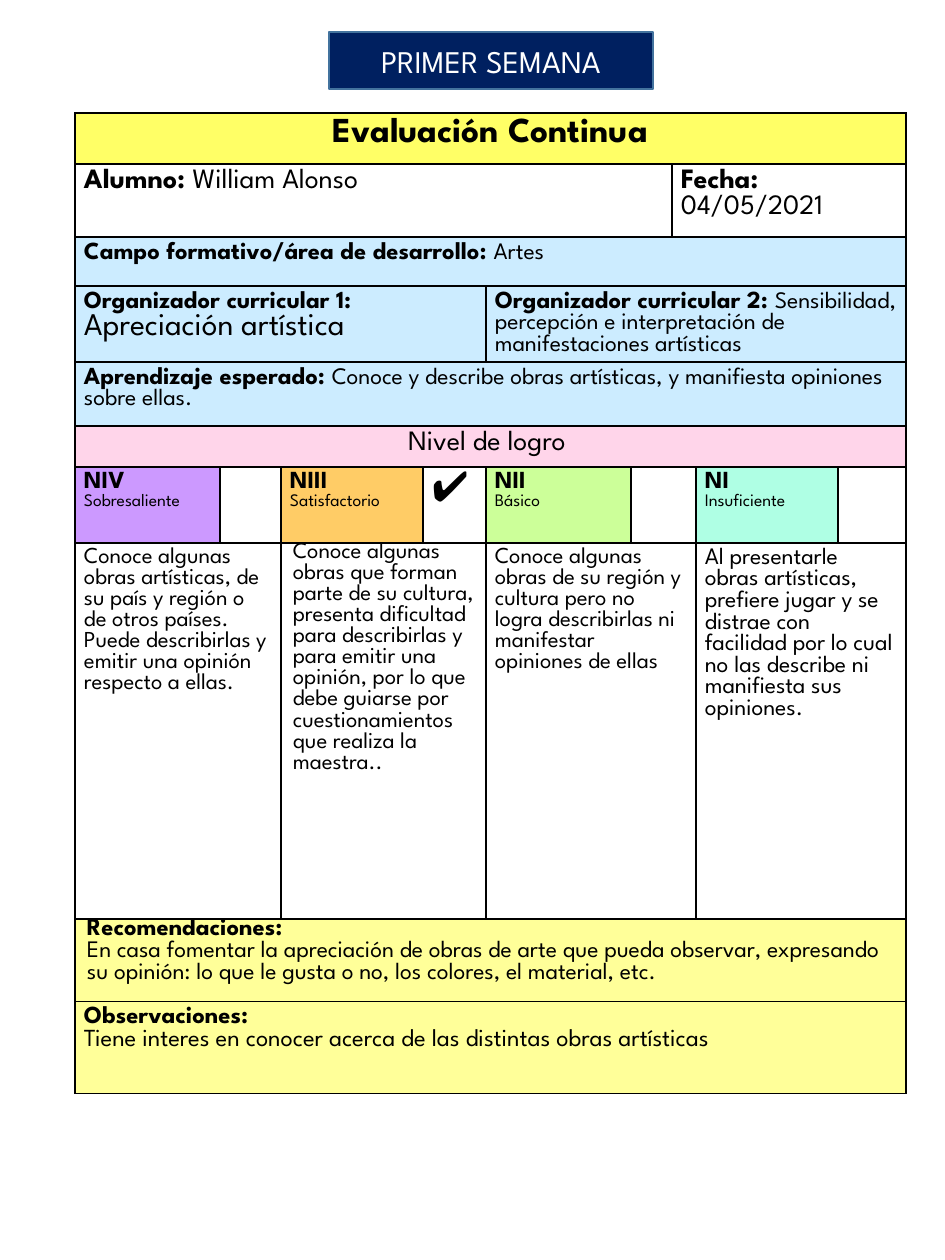
from lxml import etree
from pptx import Presentation
from pptx import util as u
from pptx.dml.color import RGBColor
from pptx.enum import text
from pptx.oxml import ns

FONT = "League Spartan"
BLACK = RGBColor(0, 0, 0)
WHITE = RGBColor(0xFF, 0xFF, 0xFF)
NAVY = RGBColor(0x00, 0x20, 0x60)
BLUE = RGBColor(0x43, 0x73, 0x9E)
YELLOW = RGBColor(0xFF, 0xFF, 0x66)
CREAM = RGBColor(0xFF, 0xFF, 0x99)
SKY = RGBColor(0xCC, 0xEC, 0xFF)
PINK = RGBColor(0xFF, 0xD5, 0xEA)
PURPLE = RGBColor(0xCC, 0x99, 0xFF)
ORANGE = RGBColor(0xFF, 0xCC, 0x66)
GREEN = RGBColor(0xCC, 0xFF, 0x99)
MINT = RGBColor(0xAF, 0xFF, 0xE4)

COLS = [145, 61, 142, 63, 145, 41, 24, 142, 68]
ROWS = [51, 73, 49, 75, 64, 41, 76, 376, 83, 92]
PAD = (9, 5)
FLUSH = (12, 0)


def px(n):
    return round(n * 914400 / 126)


def level(name, label):
    return [[(name, 14, True)], [(label, 10, False)]]


def field(label, value, size, head=14):
    return [[(label, head, True), (value, size, False)]]


def plain(words, size):
    return [[(words, size, False)]]


# Each row lists its cells as (column span, fill, paragraphs of runs).
FORM = [
    [(9, YELLOW, [[("Evaluación Continua", 20, True)]])],
    [(6, WHITE, field("Alumno: ", "William Alonso", 16, 16)),
     (3, WHITE, field("Fecha: ", "04/05/2021", 16, 16))],
    [(9, SKY, field("Campo formativo/área de desarrollo: ", "Artes", 13.5))],
    [(4, SKY, field("Organizador curricular 1: ", "Apreciación artística", 18)),
     (5, SKY, field("Organizador curricular 2: ",
                    "Sensibilidad, percepción e interpretación de "
                    "manifestaciones artísticas", 13.5))],
    [(9, SKY, field("Aprendizaje esperado: ",
                    "Conoce y describe obras artísticas, y manifiesta "
                    "opiniones sobre ellas.", 13.5))],
    [(9, PINK, plain("Nivel de logro ", 16))],
    [(1, PURPLE, level("NIV", "Sobresaliente")), (1, WHITE, []),
     (1, ORANGE, level("NIII", "Satisfactorio")),
     (1, WHITE, [[("✔", 24, True)]]),
     (1, GREEN, level("NII", "Básico")), (2, WHITE, []),
     (1, MINT, level("NI", "Insuficiente")), (1, WHITE, [])],
    [(2, WHITE, plain("Conoce algunas obras artísticas, de su país y región o "
                      "de otros países. Puede describirlas y emitir una "
                      "opinión respecto a ellas.", 13)),
     (2, WHITE, plain("Conoce algunas obras que forman parte de su cultura, "
                      "presenta dificultad para describirlas y para emitir "
                      "una opinión, por lo que debe guiarse por "
                      "cuestionamientos que realiza la maestra..", 13)),
     (3, WHITE, plain("Conoce algunas obras de su región y cultura pero no "
                      "logra describirlas ni manifestar opiniones de ellas",
                      13)),
     (2, WHITE, plain("Al presentarle obras artísticas, prefiere jugar y se "
                      "distrae con facilidad por lo cual no las describe ni "
                      "manifiesta sus opiniones.", 13.5))],
    [(9, CREAM, [[("Recomendaciones:", 14, True)],
                 [("En casa fomentar la apreciación de obras de arte que "
                   "pueda observar, expresando su opinión: lo que le gusta o "
                   "no, los colores, el material, etc.", 13.5, False)]])],
    [(9, CREAM, [[("Observaciones:", 14, True)],
                 [("Tiene interes en conocer acerca de las distintas obras "
                   "artísticas", 14, False)]])],
]
CENTRED = {0, 5}
TIGHT = {(7, 2), (8, 0)}


def write(frame, paras, color, align):
    for i, runs in enumerate(paras):
        para = frame.paragraphs[0] if i == 0 else frame.add_paragraph()
        para.alignment = align
        for words, size, bold in runs:
            run = para.add_run()
            run.text = words
            font = run.font
            font.name, font.size, font.bold = FONT, u.Pt(size), bold
            font.color.rgb = color


def edge(cell):
    """Draw a thin black line on all four sides of the cell."""
    props = cell._tc.get_or_add_tcPr()
    for side in ("lnL", "lnR", "lnT", "lnB"):
        line = etree.SubElement(props, ns.qn("a:" + side), w=str(u.Pt(1)))
        fill = etree.SubElement(line, ns.qn("a:solidFill"))
        etree.SubElement(fill, ns.qn("a:srgbClr"), val=str(BLACK))


def banner(slide, x, y, w, h):
    title = slide.shapes.title
    title.left, title.top, title.width, title.height = map(px, (x, y, w, h))
    title.fill.solid()
    title.fill.fore_color.rgb = NAVY
    title.line.color.rgb = BLUE
    title.line.width = u.Pt(1)
    frame = title.text_frame
    frame.auto_size = text.MSO_AUTO_SIZE.NONE
    frame.vertical_anchor = text.MSO_ANCHOR.MIDDLE
    write(frame, plain("PRIMER SEMANA", 18), WHITE, text.PP_ALIGN.CENTER)


def report(slide, x, y):
    grid = slide.shapes.add_table(len(ROWS), len(COLS), px(x), px(y),
                                  px(sum(COLS)), px(sum(ROWS))).table
    grid.first_row = grid.horz_banding = False
    for col, w in zip(grid.columns, COLS):
        col.width = px(w)
    for row, h in zip(grid.rows, ROWS):
        row.height = px(h)
    for r, line in enumerate(FORM):
        align = text.PP_ALIGN.CENTER if r in CENTRED else text.PP_ALIGN.LEFT
        c = 0
        for span, color, paras in line:
            for k in range(c, c + span):
                part = grid.cell(r, k)
                edge(part)
                part.fill.solid()
                part.fill.fore_color.rgb = color
            cell = grid.cell(r, c)
            if span > 1:
                cell.merge(grid.cell(r, c + span - 1))
            side, top = FLUSH if (r, c) in TIGHT else PAD
            cell.margin_left = cell.margin_right = px(side)
            cell.margin_top = cell.margin_bottom = px(top)
            write(cell.text_frame, paras, BLACK, align)
            c += span


def main():
    deck = Presentation()
    deck.slide_width, deck.slide_height = px(945), px(1260)
    slide = deck.slides.add_slide(deck.slide_layouts[5])
    banner(slide, 329, 32, 324, 57)
    report(slide, 75, 113)
    deck.save("out.pptx")


if __name__ == "__main__":
    main()
